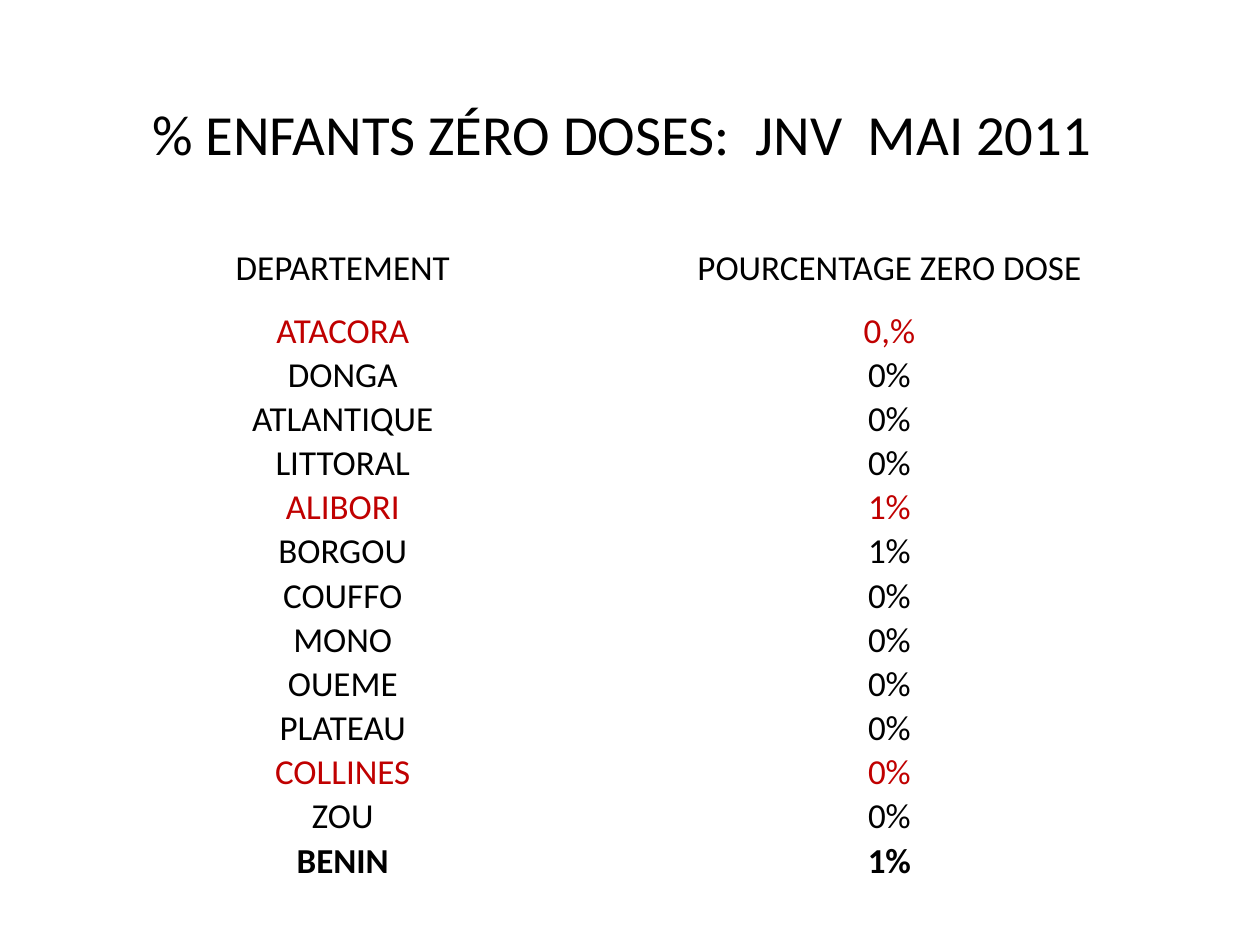
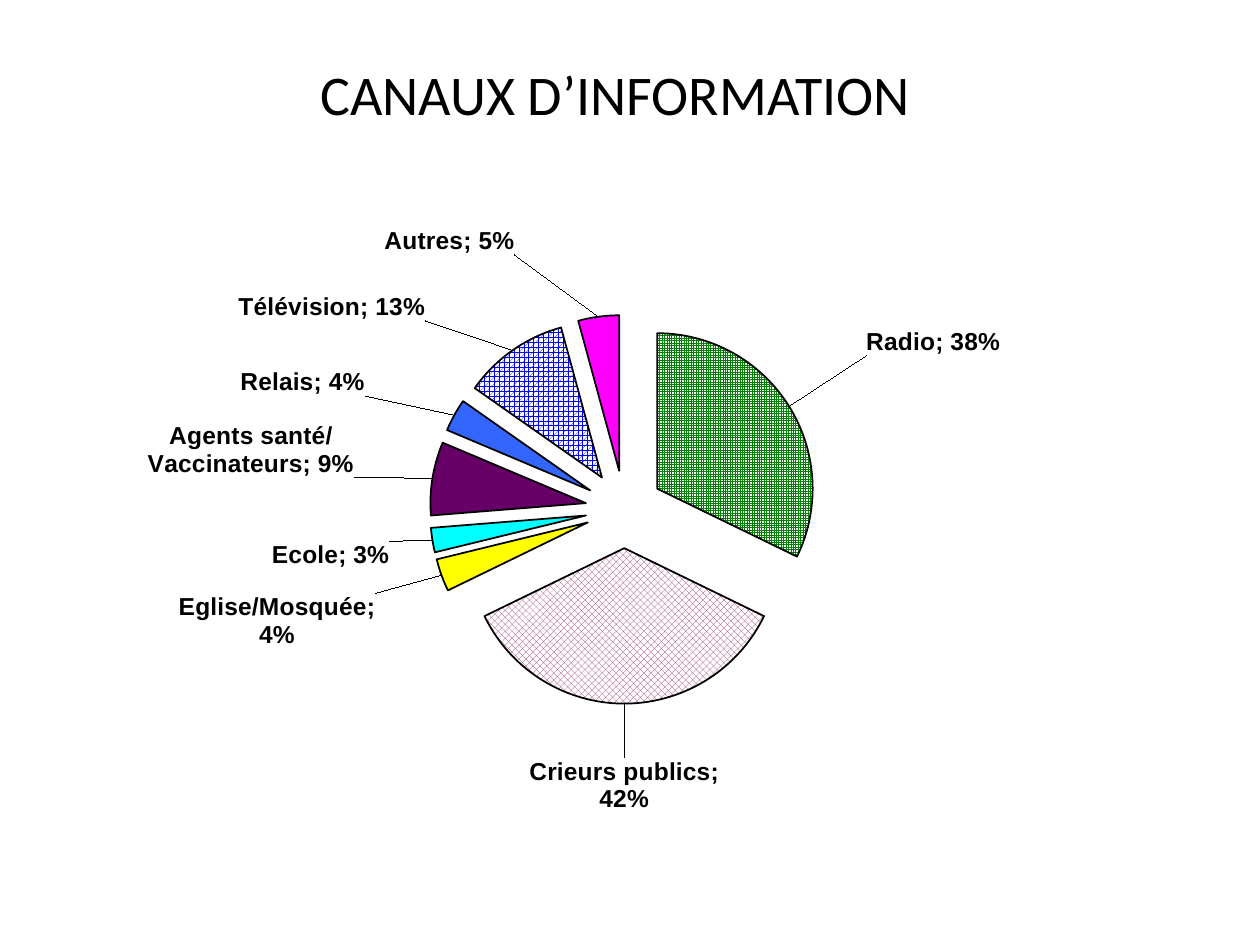
import pptx
import pptx.chart.data
import pptx.dml.color
import pptx.enum.chart
import pptx.enum.dml
import pptx.enum.text
import pptx.oxml
import pptx.oxml.ns
import pptx.util

Cm = pptx.util.Cm
Pt = pptx.util.Pt
PATTERN = pptx.enum.dml.MSO_PATTERN
ANCHOR = pptx.enum.text.MSO_ANCHOR

COLORS = {
    "text": "000000", "alert": "C00000", "white": "FFFFFF",
    "green": "008000", "plum": "993366", "yellow": "FFFF00", "cyan": "00FFFF",
    "purple": "660066", "blue": "3366FF", "deep_blue": "0000FF", "magenta": "FF00FF",
}

HEADERS = ("DEPARTEMENT", "POURCENTAGE ZERO DOSE")
DEPARTMENTS = [
    ("ATACORA", "0,%"), ("DONGA", "0%"), ("ATLANTIQUE", "0%"), ("LITTORAL", "0%"),
    ("ALIBORI", "1%"), ("BORGOU", "1%"), ("COUFFO", "0%"), ("MONO", "0%"),
    ("OUEME", "0%"), ("PLATEAU", "0%"), ("COLLINES", "0%"), ("ZOU", "0%"),
    ("BENIN", "1%"),
]
FLAGGED = {"ATACORA", "ALIBORI", "COLLINES"}
TOTAL = "BENIN"

# name, share, color, pattern, label shift as a fraction of the chart
CHANNELS = [
    ("Radio", 0.38, "green", PATTERN.SMALL_GRID, (0.06, -0.06)),
    ("Crieurs publics", 0.42, "plum", PATTERN.SOLID_DIAMOND, (0, 0.06)),
    ("Eglise/Mosquée", 0.04, "yellow", None, (-0.05, 0.02)),
    ("Ecole", 0.03, "cyan", None, (-0.03, 0)),
    ("Agents santé/Vaccinateurs", 0.09, "purple", None, (-0.06, 0)),
    ("Relais", 0.04, "blue", None, (-0.07, -0.02)),
    ("Télévision", 0.13, "deep_blue", PATTERN.SPHERE, (-0.07, -0.03)),
    ("Autres", 0.05, "magenta", None, (-0.07, -0.07)),
]
PLOT = {"x": 0.33, "y": 0.24, "w": 0.33, "h": 0.5}


def rgb(name):
    return pptx.dml.color.RGBColor.from_string(COLORS[name])


def style_font(font, size, name="Calibri", color="text", bold=False):
    font.size = Pt(size)
    font.name = name
    font.bold = bold
    font.color.rgb = rgb(color)


def write(tf, text, **fmt):
    p = tf.paragraphs[0]
    p.alignment = pptx.enum.text.PP_ALIGN.CENTER
    r = p.add_run()
    r.text = text
    style_font(r.font, **fmt)


def add_title(slide, text, left, top, size):
    tf = slide.shapes.add_textbox(left, top, Cm(22.86), Cm(2.2)).text_frame
    tf.word_wrap = True
    tf.vertical_anchor = ANCHOR.MIDDLE
    write(tf, text, size=size)


def c_xml(tag, body="", val=None):
    attr = "" if val is None else f' val="{val}"'
    ns = pptx.oxml.ns.nsdecls("c")
    return pptx.oxml.parse_xml(f"<c:{tag} {ns}{attr}>{body}</c:{tag}>")


def manual_layout(values, target=""):
    modes = "".join(f'<c:{k}Mode val="edge"/>' for k in "xy") if target else ""
    sizes = "".join(f'<c:{k} val="{v}"/>' for k, v in values.items())
    return c_xml("layout", f"<c:manualLayout>{target}{modes}{sizes}</c:manualLayout>")


def add_department_table(slide):
    rows = [HEADERS] + DEPARTMENTS
    header_h, row_h = Cm(1.65), Cm(0.89)
    table = slide.shapes.add_table(
        len(rows), len(HEADERS), Cm(1.4), Cm(4.57), Cm(22.04),
        header_h + row_h * len(DEPARTMENTS)).table
    table.first_row = False
    table.horz_banding = False
    for i, row in enumerate(rows):
        table.rows[i].height = row_h if i else header_h
        for j, text in enumerate(row):
            cell = table.cell(i, j)
            cell.fill.background()
            cell.vertical_anchor = ANCHOR.BOTTOM if i else ANCHOR.MIDDLE
            cell.margin_left = cell.margin_right = cell.margin_top = Cm(0.02)
            cell.margin_bottom = 0
            write(cell.text_frame, text, size=20, bold=row[0] == TOTAL,
                  color="alert" if row[0] in FLAGGED else "text")


def fill_slice(fill, color, pattern):
    if pattern is None:
        fill.solid()
    else:
        fill.patterned()
        fill.pattern = pattern
        fill.back_color.rgb = rgb("white")
    fill.fore_color.rgb = rgb(color)


def label_slice(point, shift):
    label = point.data_label
    style_font(label.font, 14, name="Arial", bold=True)
    label.position = pptx.enum.chart.XL_LABEL_POSITION.OUTSIDE_END
    dlbl = label._dLbl
    dlbl.find(pptx.oxml.ns.qn("c:idx")).addnext(manual_layout(dict(zip("xy", shift))))
    dlbl.find(pptx.oxml.ns.qn("c:showCatName")).set("val", "1")
    dlbl.append(c_xml("separator", "; "))


def add_channel_chart(slide):
    data = pptx.chart.data.CategoryChartData(number_format="0%")
    data.categories = [channel[0] for channel in CHANNELS]
    data.add_series("Series 1", [channel[1] for channel in CHANNELS])
    chart = slide.shapes.add_chart(
        pptx.enum.chart.XL_CHART_TYPE.PIE, Cm(0.79), Cm(2.59), Cm(23.83), Cm(15.67),
        data).chart
    chart.has_title = False
    chart.has_legend = False
    style_font(chart.font, 10, name="Arial")
    plot = chart.plots[0]
    plot.vary_by_categories = False
    area = plot._element.getparent()
    for old in area.findall(pptx.oxml.ns.qn("c:layout")):
        area.remove(old)
    area.insert(0, manual_layout(PLOT, '<c:layoutTarget val="inner"/>'))

    series = plot.series[0]
    series.format.line.width = Pt(1)
    series._element.find(pptx.oxml.ns.qn("c:spPr")).addnext(c_xml("explosion", val=25))
    labels = series.data_labels
    labels.number_format = "0%"
    labels.number_format_is_linked = False
    labels.show_value = True
    labels.show_category_name = True
    style_font(labels.font, 14, name="Arial", bold=True)
    for i, (_, _, color, pattern, shift) in enumerate(CHANNELS):
        point = series.points[i]
        fill_slice(point.format.fill, color, pattern)
        point.format.line.color.rgb = rgb("text")
        point.format.line.width = Pt(1)
        label_slice(point, shift)


def main():
    prs = pptx.Presentation()
    prs.slide_width, prs.slide_height = Cm(25.4), Cm(19.05)
    blank = prs.slide_layouts[6]

    slide = prs.slides.add_slide(blank)
    add_title(slide, "% ENFANTS ZÉRO DOSES:  JNV  MAI 2011", Cm(1.11), Cm(1.58), 32.4)
    add_department_table(slide)

    slide = prs.slides.add_slide(blank)
    add_title(slide, "CANAUX D’INFORMATION", Cm(0.98), Cm(0.77), 32)
    add_channel_chart(slide)

    prs.save("out.pptx")


if __name__ == "__main__":
    main()
